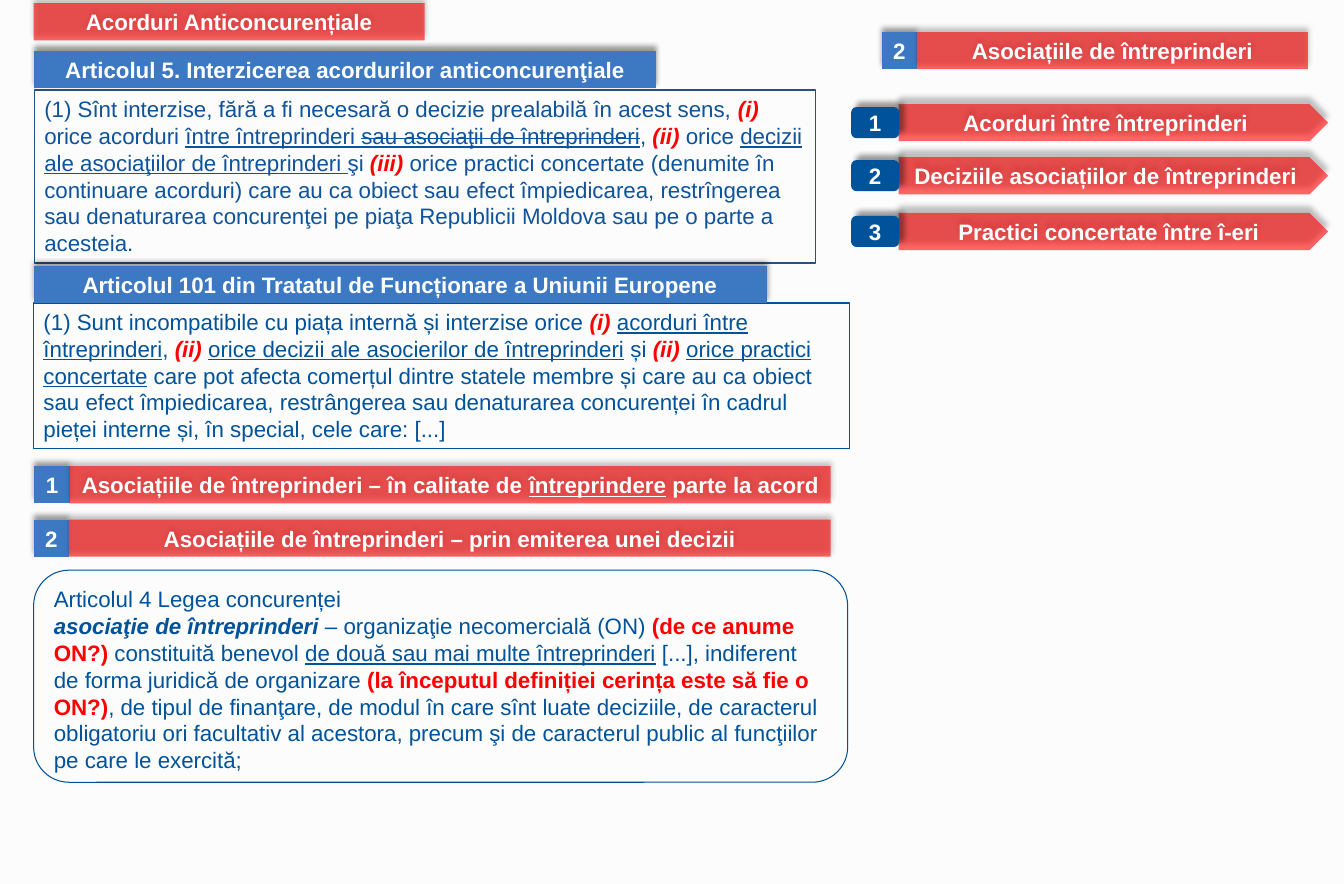
"""Builds the slide on anticompetitive agreements and associations of undertakings."""
from dataclasses import dataclass

from lxml import etree
from pptx import Presentation
from pptx import util as u
from pptx.dml.color import RGBColor
from pptx.enum import shapes, text
from pptx.oxml.ns import qn
from pptx.shapes.autoshape import Shape
from pptx.slide import Slide

RED, BLUE, NAVY, OUTLINE, WHITE = "FF0000", "3D79C3", "00539B", "005198", "FFFFFF"
PROCESS = shapes.MSO_SHAPE.FLOWCHART_PROCESS
ROUNDED = shapes.MSO_SHAPE.ROUNDED_RECTANGLE
BAR_HEIGHT, NUMBER_WIDTH = 0.94, 0.89
BADGE_LEFT, BADGE_WIDTH, BADGE_HEIGHT = 21.52, 1.19, 0.76

Passage = tuple[str, str]


@dataclass(frozen=True)
class Box:
    left: float
    top: float
    width: float
    height: float = BAR_HEIGHT


@dataclass(frozen=True)
class Look:
    fill: str
    opacity: int = 100
    shadow_distance: int = 3
    shadow_angle: int = 270
    outline: str | None = None


@dataclass(frozen=True)
class Panel:
    box: Box
    outline: str
    ink: str
    paragraphs: list[list[Passage]]
    line_width: float = 1
    geometry: shapes.MSO_SHAPE = shapes.MSO_SHAPE.RECTANGLE


@dataclass(frozen=True)
class NumberedBar:
    number: str
    box: Box
    heading: list[Passage]


RED_BAR, BLUE_BAR = Look(RED, 60), Look(BLUE)
ARROW, BADGE = Look(RED, 60, 5), Look(NAVY, 100, 5, 315, OUTLINE)

HEADINGS = [
    (Box(0.85, 6.72, 18.52), "Articolul 101 din Tratatul de Funcționare a Uniunii Europene"),
    (Box(0.87, 1.28, 15.7), "Articolul 5. Interzicerea acordurilor anticoncurenţiale"),
]
NUMBERED_BARS = [
    NumberedBar("1", Box(0.87, 11.78, 20.12), [
        ("Asociațiile de întreprinderi – în calitate de ", "b"),
        ("întreprindere", "bu"), (" parte la acord", "b")]),
    NumberedBar("2", Box(0.85, 13.13, 20.14), [
        ("Asociațiile de întreprinderi – prin emiterea unei decizii", "b")]),
    NumberedBar("2", Box(22.28, 0.81, 10.77), [("Asociațiile de întreprinderi", "b")]),
]
AGREEMENT_KINDS = [
    (2.63, "Acorduri între întreprinderi "),
    (3.97, "Deciziile asociațiilor de întreprinderi "),
    (5.38, "Practici concertate între î-eri"),
]
PANELS = [
    Panel(Box(0.87, 2.28, 19.74, 4.37), "285182", "0E539B", [[
        ("(1) Sînt interzise, fără a fi necesară o decizie prealabilă în acest sens, ", ""),
        ("(i) ", "bir"), ("orice acorduri ", ""), ("între întreprinderi ", "u"),
        ("sau asociaţii de întreprinderi", "us"), (", ", ""), ("(ii) ", "bir"),
        ("orice ", ""), ("decizii ale asociaţiilor de întreprinderi ", "u"),
        ("şi ", ""), ("(iii)", "bir"),
        (" orice practici concertate (denumite în continuare acorduri) care au ca obiect "
         "sau efect împiedicarea, restrîngerea sau denaturarea concurenţei pe piaţa "
         "Republicii Moldova sau pe o parte a acesteia.", "")]]),
    Panel(Box(0.85, 7.66, 20.62, 3.68), NAVY, NAVY, [[
        ("(1) Sunt incompatibile cu piața internă și interzise orice ", ""),
        ("(i) ", "bir"), ("acorduri între întreprinderi", "u"), (", ", ""),
        ("(ii) ", "bir"), ("orice decizii ale asocierilor de întreprinderi", "u"),
        (" și ", ""), ("(ii) ", "bir"), ("orice practici concertate", "u"),
        (" care pot afecta comerțul dintre statele membre și care au ca obiect sau efect "
         "împiedicarea, restrângerea sau denaturarea concurenței în cadrul pieței interne "
         "și, în special, cele care: [...]", "")]]),
    Panel(Box(0.85, 14.41, 20.57, 5.36), OUTLINE, NAVY, [
        [("Articolul 4 Legea concurenței", "")],
        [("asociaţie de întreprinderi ", "bi"), ("– organizaţie necomercială (ON) ", ""),
         ("(de ce anume ON?)", "br"), (" constituită benevol ", ""),
         ("de două sau mai multe întreprinderi", "u"),
         (" [...], indiferent de forma juridică de organizare ", ""),
         ("(la începutul definiției cerința este să fie o ON?)", "br"),
         (", de tipul de finanţare, de modul în care sînt luate deciziile, de caracterul "
          "obligatoriu ori facultativ al acestora, precum şi de caracterul public al "
          "funcţiilor pe care le exercită;", "")]], 0.75, ROUNDED),
]


def rgb(code: str) -> RGBColor:
    return RGBColor.from_string(code)


def place(shape: Shape, box: Box) -> None:
    shape.left, shape.top = u.Cm(box.left), u.Cm(box.top)
    shape.width, shape.height = u.Cm(box.width), u.Cm(box.height)


def add_box(slide: Slide, geometry: shapes.MSO_SHAPE, box: Box) -> Shape:
    return slide.shapes.add_shape(
        geometry, u.Cm(box.left), u.Cm(box.top), u.Cm(box.width), u.Cm(box.height))


def set_opacity(color: etree._Element, percent: int) -> None:
    etree.SubElement(color, qn("a:alpha"), val=str(percent * 1000))


def write(shape: Shape, paragraphs: list[list[Passage]], ink: str,
          align: text.PP_ALIGN, anchor: text.MSO_ANCHOR) -> None:
    frame = shape.text_frame
    frame.word_wrap, frame.auto_size = True, text.MSO_AUTO_SIZE.NONE
    frame.vertical_anchor = anchor
    frame.margin_left = frame.margin_right = u.Cm(0.25)
    frame.margin_top = frame.margin_bottom = u.Cm(0.13)
    for index, passages in enumerate(paragraphs):
        paragraph = frame.add_paragraph() if index else frame.paragraphs[0]
        paragraph.alignment = align
        for words, marks in passages:
            run = paragraph.add_run()
            run.text = words
            font = run.font
            font.name, font.size = "Arial", u.Pt(16)
            font.bold, font.italic, font.underline = "b" in marks, "i" in marks, "u" in marks
            font.color.rgb = rgb(RED if "r" in marks else ink)
            if "s" in marks:
                font._element.set("strike", "sngStrike")


def style_label(shape: Shape, look: Look, passages: list[Passage]) -> None:
    shape.fill.solid()
    shape.fill.fore_color.rgb = rgb(look.fill)
    properties = shape._element.spPr
    if look.opacity < 100:
        set_opacity(properties.find(".//" + qn("a:srgbClr")), look.opacity)
    if look.outline:
        shape.line.color.rgb, shape.line.width = rgb(look.outline), u.Pt(0.75)
    else:
        shape.line.fill.background()
    shape.shadow.inherit = False
    shadow = etree.SubElement(
        properties.find(qn("a:effectLst")), qn("a:outerShdw"), blurRad=str(u.Pt(4)),
        dist=str(u.Pt(look.shadow_distance)), dir=str(look.shadow_angle * 60000))
    set_opacity(etree.SubElement(shadow, qn("a:srgbClr"), val="000000"), 40)
    write(shape, [passages], WHITE, text.PP_ALIGN.CENTER, text.MSO_ANCHOR.MIDDLE)


def add_numbered_bar(slide: Slide, bar: NumberedBar) -> None:
    box = bar.box
    number_box = Box(box.left, box.top, NUMBER_WIDTH)
    heading_box = Box(box.left + NUMBER_WIDTH, box.top, box.width - NUMBER_WIDTH)
    style_label(add_box(slide, PROCESS, number_box), BLUE_BAR, [(bar.number, "b")])
    style_label(add_box(slide, PROCESS, heading_box), RED_BAR, bar.heading)


def add_agreement_kind(slide: Slide, number: int, top: float, kind: str) -> None:
    arrow_box = Box(BADGE_LEFT + BADGE_WIDTH, top, 10.85)
    badge_box = Box(BADGE_LEFT, top + (BAR_HEIGHT - BADGE_HEIGHT) / 2, BADGE_WIDTH, BADGE_HEIGHT)
    style_label(add_box(slide, shapes.MSO_SHAPE.PENTAGON, arrow_box), ARROW, [(kind, "b")])
    style_label(add_box(slide, ROUNDED, badge_box), BADGE, [(str(number), "b")])


def add_panel(slide: Slide, panel: Panel) -> None:
    shape = add_box(slide, panel.geometry, panel.box)
    shape.fill.background()
    shape.line.color.rgb, shape.line.width = rgb(panel.outline), u.Pt(panel.line_width)
    shape.shadow.inherit = False
    write(shape, panel.paragraphs, panel.ink, text.PP_ALIGN.LEFT, text.MSO_ANCHOR.TOP)


def main() -> None:
    deck = Presentation()
    deck.slide_width, deck.slide_height = u.Cm(33.96), u.Cm(22.34)
    slide = deck.slides.add_slide(deck.slide_layouts[5])
    slide.background.fill.solid()
    slide.background.fill.fore_color.rgb = rgb("FCFCFC")
    place(slide.shapes.title, Box(0.85, 0.08, 9.88))
    style_label(slide.shapes.title, RED_BAR, [("Acorduri Anticoncurențiale", "b")])
    for bar in NUMBERED_BARS:
        add_numbered_bar(slide, bar)
    for number, (top, kind) in enumerate(AGREEMENT_KINDS, start=1):
        add_agreement_kind(slide, number, top, kind)
    for panel in PANELS:
        add_panel(slide, panel)
    for box, heading in HEADINGS:
        style_label(add_box(slide, PROCESS, box), BLUE_BAR, [(heading, "b")])
    deck.save("out.pptx")


if __name__ == "__main__":
    main()
